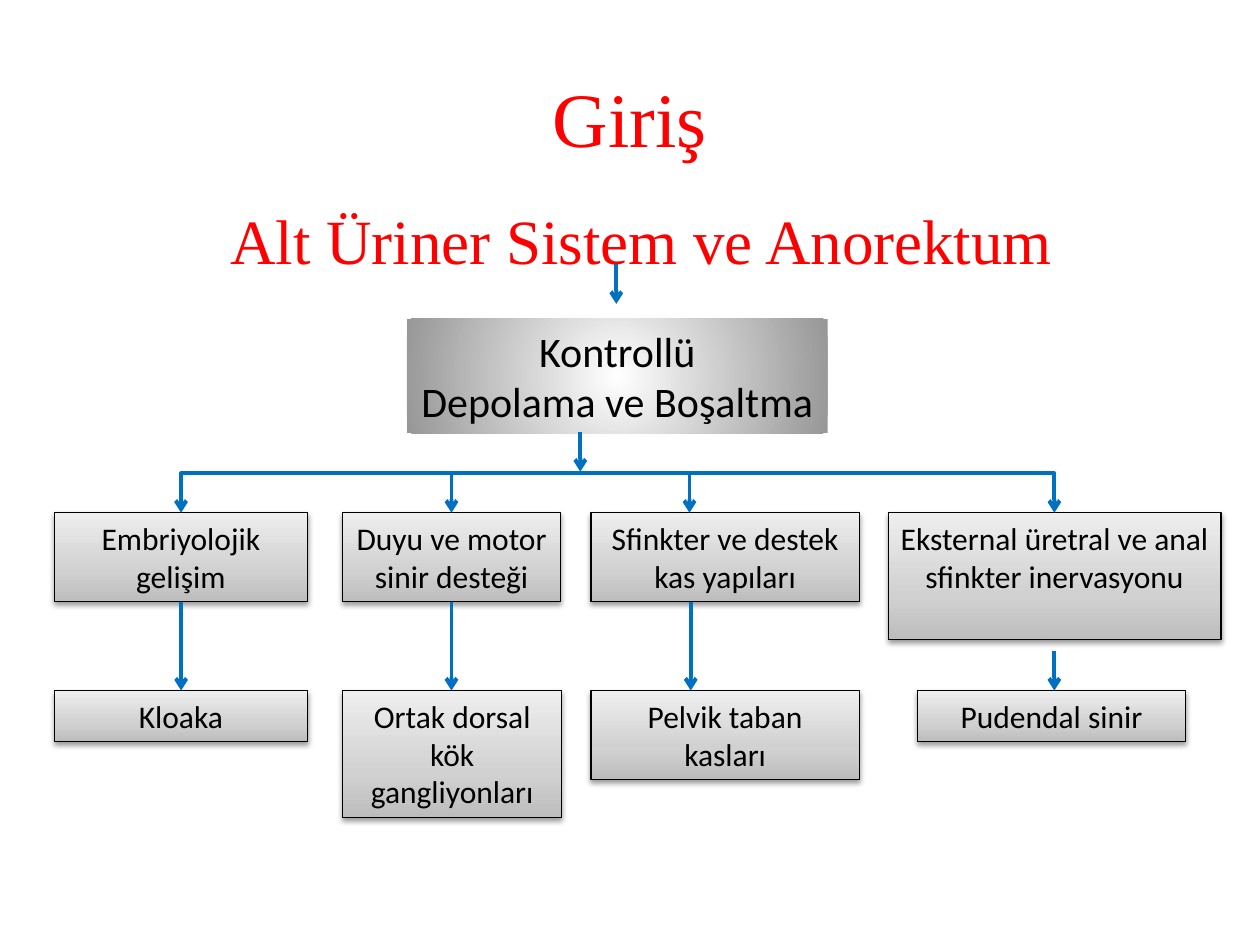
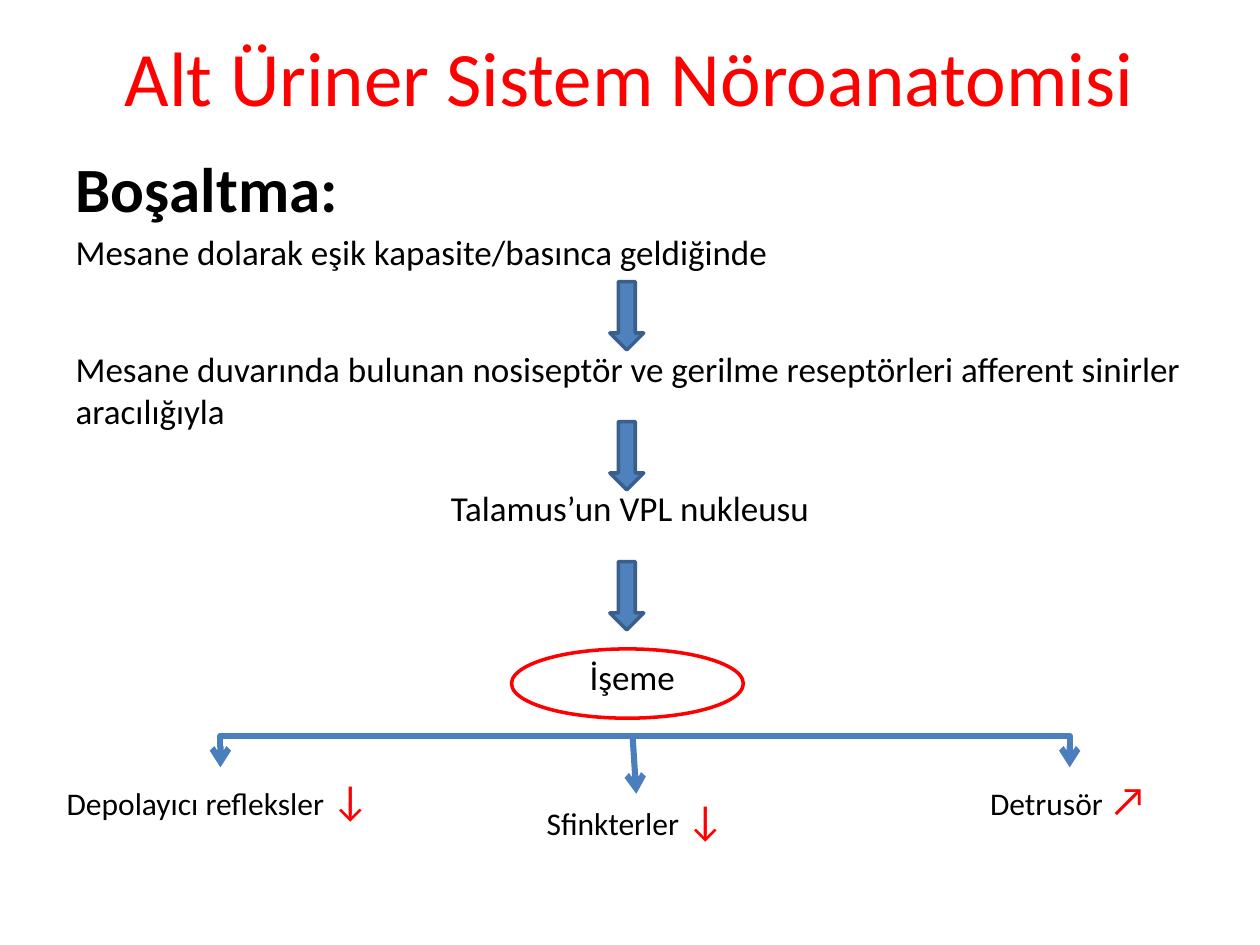
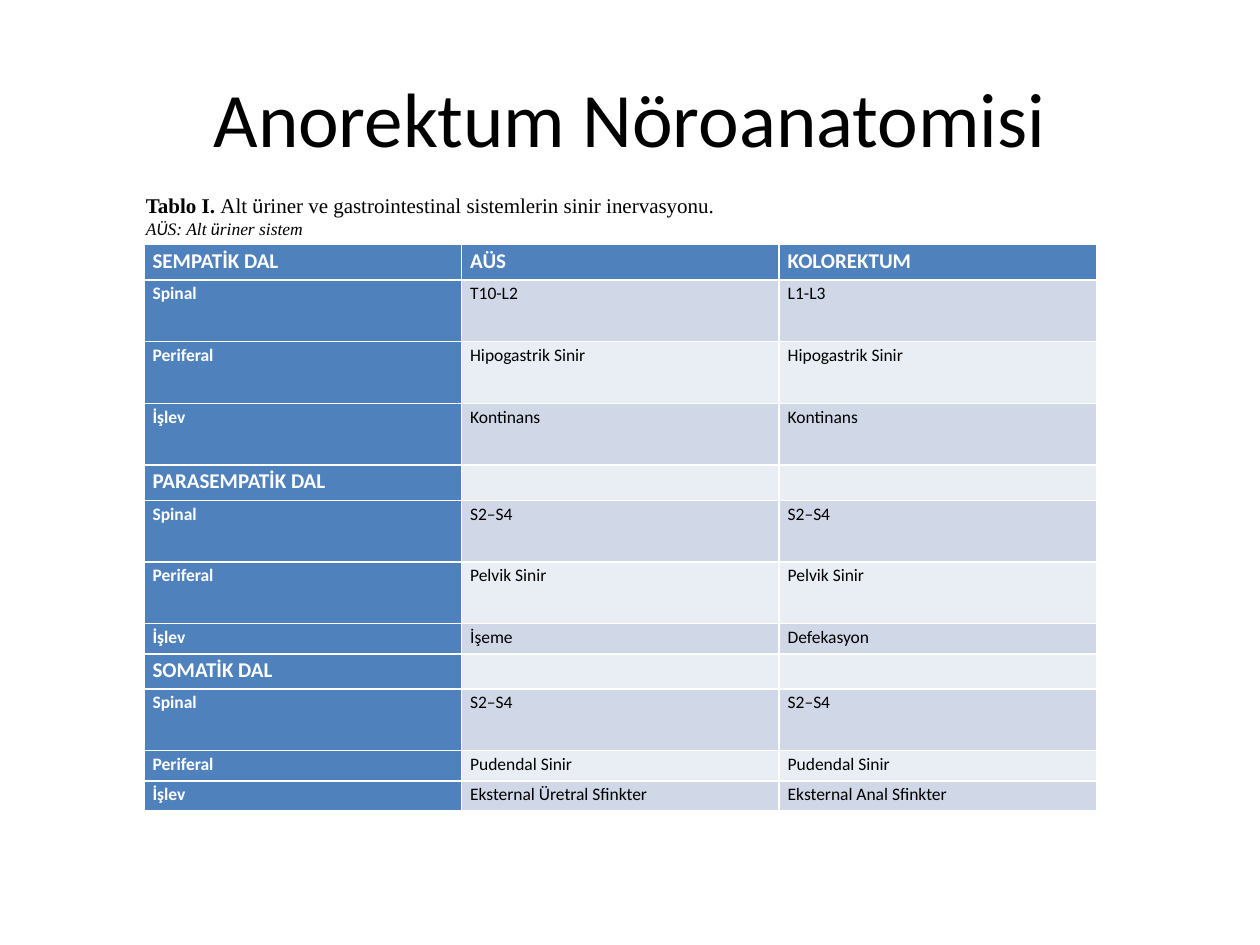
from dataclasses import dataclass

from lxml import etree
from pptx import Presentation
from pptx.dml.color import RGBColor
from pptx.enum.shapes import MSO_CONNECTOR, MSO_SHAPE
from pptx.enum.text import MSO_ANCHOR, MSO_AUTO_SIZE, PP_ALIGN
from pptx.oxml import parse_xml
from pptx.oxml.ns import nsdecls, qn
from pptx.util import Pt

CENTER, LEFT = PP_ALIGN.CENTER, PP_ALIGN.LEFT
TOP, MIDDLE = MSO_ANCHOR.TOP, MSO_ANCHOR.MIDDLE
NO_FIT, FIT_SHAPE = MSO_AUTO_SIZE.NONE, MSO_AUTO_SIZE.SHAPE_TO_FIT_TEXT
RECT, OVAL, DOWN_ARROW = MSO_SHAPE.RECTANGLE, MSO_SHAPE.OVAL, MSO_SHAPE.DOWN_ARROW
STRAIGHT, ELBOW = MSO_CONNECTOR.STRAIGHT, MSO_CONNECTOR.ELBOW
TITLE_AND_BODY, TITLE_ONLY = 1, 5

RED = RGBColor(0xFF, 0x00, 0x00)
BLACK = RGBColor(0x00, 0x00, 0x00)
WHITE = RGBColor(0xFF, 0xFF, 0xFF)
FLOW_BLUE = RGBColor(0x00, 0x70, 0xC0)
ACCENT = RGBColor(0x4F, 0x81, 0xBD)
ACCENT_EDGE = RGBColor(0x3A, 0x5F, 0x8C)
ACCENT_LINE = RGBColor(0x4B, 0x7E, 0xBC)
BAND_DARK = RGBColor(0xD0, 0xD8, 0xE8)
BAND_LIGHT = RGBColor(0xE9, 0xED, 0xF4)
GREY_LOW = RGBColor(0xBD, 0xBD, 0xBD)
GREY_MID = RGBColor(0xD1, 0xD1, 0xD1)
GREY_HIGH = RGBColor(0xEE, 0xEE, 0xEE)
GREY_EDGE = RGBColor(0x97, 0x97, 0x97)

SANS, SERIF = "Calibri", "Times New Roman"

UPWARD = '<a:lin ang="16200000" scaled="0"/>'
FROM_CENTER = ('<a:path path="circle"><a:fillToRect l="50000" t="50000" '
               'r="50000" b="50000"/></a:path>')
SOFT_SHADOW = (f'<a:outerShdw {nsdecls("a")} blurRad="40000" dist="20000" dir="5400000" '
               'rotWithShape="0"><a:srgbClr val="000000"><a:alpha val="38000"/>'
               '</a:srgbClr></a:outerShdw>')


@dataclass(frozen=True)
class Box:
    left: float
    top: float
    width: float
    lines: int
    text: str


@dataclass(frozen=True)
class Arrow:
    x: float
    y: float
    end_x: float
    end_y: float


@dataclass(frozen=True)
class Outcome:
    left: float
    top: float
    width: float
    text: str
    trend: str


CAUSE_TOP, DETAIL_TOP, FLOW_BAR = 293, 394.6, 270.5
FLOW_BOXES = [
    Box(31, CAUSE_TOP, 144.7, 2, "Embriyolojik gelişim"),
    Box(195.8, CAUSE_TOP, 124.6, 2, "Duyu ve motor sinir desteği"),
    Box(337.7, CAUSE_TOP, 153.4, 2, "Sfinkter ve destek kas yapıları"),
    Box(507.6, CAUSE_TOP, 190.1, 3, "Eksternal üretral ve anal sfinkter inervasyonu"),
    Box(31, DETAIL_TOP, 144.7, 1, "Kloaka"),
    Box(195.8, DETAIL_TOP, 125.3, 3, "Ortak dorsal kök gangliyonları"),
    Box(337.7, DETAIL_TOP, 153.4, 2, "Pelvik taban kasları"),
    Box(524.2, DETAIL_TOP, 153.4, 1, "Pudendal sinir"),
]
FLOW_ARROWS = [
    Arrow(352.2, 151, 352.2, 173.7),
    Arrow(331.6, 247, 331.6, 269.5),
    Arrow(368, FLOW_BAR, 103.5, CAUSE_TOP),
    Arrow(368, FLOW_BAR, 602.5, CAUSE_TOP),
    Arrow(258, FLOW_BAR, 258, CAUSE_TOP),
    Arrow(394, FLOW_BAR, 394, CAUSE_TOP),
    Arrow(103.5, 343.8, 103.5, DETAIL_TOP),
    Arrow(258, 343.8, 258, DETAIL_TOP),
    Arrow(394.7, 343.8, 394.7, DETAIL_TOP),
    Arrow(602.5, 372.2, 602.5, DETAIL_TOP),
]

OUTCOMES = [
    Outcome(31, 438.5, 189.4, "Depolayıcı refleksler ", "↓"),
    Outcome(305.3, 450, 117.4, "Sfinkterler ", "↓"),
    Outcome(558.7, 438.5, 105.1, "Detrusör ", "↗"),
]
OUTCOME_ARROWS = [
    Arrow(361.5, 420.5, 126, 438.5),
    Arrow(361.5, 420.5, 611.3, 438.5),
    Arrow(361.5, 420.5, 363.6, 453.6),
]

TALL, SECTION, SHORT = 35.25, 20.2, 17.25
NERVE_ROWS = [
    (SECTION, "SEMPATİK DAL", "AÜS", "KOLOREKTUM"),
    (TALL, "Spinal", "T10-L2", "L1-L3"),
    (TALL, "Periferal", "Hipogastrik Sinir", "Hipogastrik Sinir"),
    (TALL, "İşlev", "Kontinans", "Kontinans"),
    (SECTION, "PARASEMPATİK DAL", "", ""),
    (TALL, "Spinal", "S2–S4", "S2–S4"),
    (TALL, "Periferal", "Pelvik Sinir", "Pelvik Sinir"),
    (SHORT, "İşlev", "İşeme", "Defekasyon"),
    (SECTION, "SOMATİK DAL", "", ""),
    (TALL, "Spinal", "S2–S4", "S2–S4"),
    (SHORT, "Periferal", "Pudendal Sinir", "Pudendal Sinir"),
    (SHORT, "İşlev", "Eksternal Üretral Sfinkter", "Eksternal Anal Sfinkter"),
]


def add_run(p, text: str, *, size: float, color: RGBColor = BLACK, font: str = SANS,
            bold: bool = False, italic: bool = False) -> None:
    r = p.add_run()
    r.text = text
    r.font.size = Pt(size)
    r.font.color.rgb = color
    r.font.name = font
    r.font.bold = bold
    r.font.italic = italic


def next_paragraph(tf, *, align=LEFT, before: float = 0):
    """Return the empty first paragraph, or a new one after the last."""
    p = tf.paragraphs[0] if not tf.paragraphs[0].runs else tf.add_paragraph()
    p.alignment = align
    p.space_before = Pt(before)
    return p


def plain_paragraph(tf, *, align=LEFT, before: float = 0):
    """A list paragraph without bullet or indent."""
    p = next_paragraph(tf, align=align, before=before)
    pPr = p._p.get_or_add_pPr()
    pPr.set("marL", "0")
    pPr.set("indent", "0")
    etree.SubElement(pPr, qn("a:buNone"))
    return p


def place(sp, left: float, top: float, width: float, height: float) -> None:
    sp.left, sp.top, sp.width, sp.height = Pt(left), Pt(top), Pt(width), Pt(height)


def add_slide(prs, layout: int, title: str, *, top: float = 21.6,
              color: RGBColor = BLACK, font: str = SANS):
    s = prs.slides.add_slide(prs.slide_layouts[layout])
    place(s.shapes.title, 36, top, 648, 90)
    tf = s.shapes.title.text_frame
    tf.vertical_anchor = MIDDLE
    add_run(next_paragraph(tf, align=CENTER), title, size=44, color=color, font=font)
    return s


def body_frame(s, left: float, top: float, height: float):
    body = s.placeholders[1]
    place(body, left, top, 648, height)
    body.text_frame.auto_size = NO_FIT
    return body.text_frame


def add_shape(s, kind, left: float, top: float, width: float, height: float, *,
              fill: RGBColor | None = None, line: RGBColor | None = None,
              weight: float = 2):
    sp = s.shapes.add_shape(kind, Pt(left), Pt(top), Pt(width), Pt(height))
    sp.shadow.inherit = False
    if fill is None:
        sp.fill.background()
    else:
        sp.fill.solid()
        sp.fill.fore_color.rgb = fill
    if line is None:
        sp.line.fill.background()
    else:
        sp.line.color.rgb = line
        sp.line.width = Pt(weight)
    return sp


def set_gradient(sp, stops: list[tuple[int, RGBColor]], direction: str) -> None:
    marks = "".join(f'<a:gs pos="{pos * 1000}"><a:srgbClr val="{color}"/></a:gs>'
                    for pos, color in stops)
    spPr = sp._element.spPr
    spPr.replace(spPr.find(qn("a:noFill")), parse_xml(
        f'<a:gradFill {nsdecls("a")} rotWithShape="1"><a:gsLst>{marks}</a:gsLst>'
        f'{direction}</a:gradFill>'))


def add_text_box(s, left: float, top: float, width: float, height: float, *,
                 wrap: bool = False):
    tf = s.shapes.add_textbox(Pt(left), Pt(top), Pt(width), Pt(height)).text_frame
    tf.word_wrap = wrap
    tf.auto_size = FIT_SHAPE
    return tf


def add_flow_box(s, box: Box) -> None:
    sp = add_shape(s, RECT, box.left, box.top, box.width, 7.2 + 21.8 * box.lines,
                   line=BLACK, weight=0.75)
    set_gradient(sp, [(0, GREY_LOW), (35, GREY_MID), (100, GREY_HIGH)], UPWARD)
    sp._element.spPr.find(qn("a:effectLst")).append(parse_xml(SOFT_SHADOW))
    tf = sp.text_frame
    tf.word_wrap = True
    tf.vertical_anchor = TOP
    add_run(next_paragraph(tf, align=CENTER), box.text, size=18)


def add_arrow(s, arrow: Arrow, *, color: RGBColor, weight: float) -> None:
    """Draw a straight arrow, or one that runs sideways and then down."""
    bent = abs(arrow.end_x - arrow.x) > 10
    c = s.shapes.add_connector(ELBOW if bent else STRAIGHT, Pt(arrow.x), Pt(arrow.y),
                               Pt(arrow.end_x), Pt(arrow.end_y))
    c.line.color.rgb = color
    c.line.width = Pt(weight)
    spPr = c._element.spPr
    if bent:
        spPr.find(qn("a:prstGeom")).set("prst", "bentConnector2")
    etree.SubElement(spPr.find(qn("a:ln")), qn("a:tailEnd")).set("type", "arrow")
    etree.SubElement(spPr, qn("a:effectLst"))


def build_intro(prs) -> None:
    s = add_slide(prs, TITLE_AND_BODY, "Giriş", color=RED, font=SERIF)
    tf = body_frame(s, 42.5, 111.6, 373.7)
    add_run(plain_paragraph(tf, align=CENTER), "Alt Üriner Sistem ve Anorektum",
            size=36, color=RED, font=SERIF)

    control = add_shape(s, RECT, 232.5, 182, 240.5, 65.5)
    set_gradient(control, [(0, WHITE), (100, GREY_EDGE)], FROM_CENTER)
    control.text_frame.word_wrap = False
    for text in ("Kontrollü", "Depolama ve Boşaltma"):
        add_run(next_paragraph(control.text_frame, align=CENTER), text, size=24)

    for box in FLOW_BOXES:
        add_flow_box(s, box)
    for arrow in FLOW_ARROWS:
        add_arrow(s, arrow, color=FLOW_BLUE, weight=2.25)


def build_voiding(prs) -> None:
    s = add_slide(prs, TITLE_AND_BODY, "Alt Üriner Sistem Nöroanatomisi", top=-2, color=RED)
    tf = body_frame(s, 36, 82, 396.7)
    add_run(plain_paragraph(tf), "Boşaltma:", size=36, bold=True)
    for text, before, align in (
        ("Mesane dolarak eşik kapasite/basınca geldiğinde", 3, LEFT),
        ("Mesane duvarında bulunan nosiseptör ve gerilme reseptörleri "
         "afferent sinirler aracılığıyla", 42.5, LEFT),
        ("Talamus’un VPL nukleusu", 31.5, CENTER),
    ):
        add_run(plain_paragraph(tf, align=align, before=before), text, size=20)

    for step in range(3):
        add_shape(s, DOWN_ARROW, 348.5, 161 + 80 * step, 19.4, 39,
                  fill=ACCENT, line=ACCENT_EDGE)
    add_run(next_paragraph(add_text_box(s, 329.8, 370.8, 64, 31.5)), "İşeme", size=20)
    for outcome in OUTCOMES:
        p = next_paragraph(add_text_box(s, outcome.left, outcome.top, outcome.width, 36))
        add_run(p, outcome.text, size=18)
        add_run(p, outcome.trend, size=24, color=RED)
    for arrow in OUTCOME_ARROWS:
        add_arrow(s, arrow, color=ACCENT_LINE, weight=3.5)
    add_shape(s, OVAL, 292.3, 370.8, 132.5, 39.6, line=RED)


def fill_cell(cell, text: str, row: int, col: int, size: float) -> None:
    heading = row == 0 or col == 0
    cell.fill.solid()
    cell.fill.fore_color.rgb = ACCENT if heading else BAND_DARK if row % 2 else BAND_LIGHT
    cell.margin_left = cell.margin_right = Pt(5)
    cell.margin_top = cell.margin_bottom = 0
    p = next_paragraph(cell.text_frame)
    p.line_spacing = 1.15
    if text:
        add_run(p, text, size=size, color=WHITE if heading else BLACK, bold=heading)
    else:
        p._p.get_or_add_endParaRPr().set("sz", str(size * 100))


def build_nerve_table(prs) -> None:
    s = add_slide(prs, TITLE_ONLY, "Anorektum Nöroanatomisi")
    height = sum(row[0] for row in NERVE_ROWS)
    table = s.shapes.add_table(len(NERVE_ROWS), 3, Pt(82.2), Pt(139.8),
                               Pt(544.5), Pt(height)).table
    table.first_col = True
    for column in table.columns:
        column.width = Pt(181.5)
    for i, (row_height, *texts) in enumerate(NERVE_ROWS):
        table.rows[i].height = Pt(row_height)
        for j, text in enumerate(texts):
            fill_cell(table.cell(i, j), text, i, j, 12 if row_height == SECTION else 10)

    tf = add_text_box(s, 76.3, 106.5, 360, 33.8, wrap=True)
    tf.vertical_anchor = MIDDLE
    p = next_paragraph(tf)
    add_run(p, "Tablo I. ", size=12, font=SERIF, bold=True)
    for text, font in (("Alt ", SERIF), ("ü", SANS),
                       ("riner ve gastrointestinal sistemlerin sinir inervasyonu.", SERIF)):
        add_run(p, text, size=12, font=font)
    p = next_paragraph(tf)
    for text, font in (("A", SERIF), ("Ü", SANS), ("S: Alt ", SERIF), ("ü", SANS),
                       ("riner sistem", SERIF)):
        add_run(p, text, size=10, font=font, italic=True)


def main() -> None:
    prs = Presentation()
    prs.slide_width, prs.slide_height = Pt(720), Pt(540)
    build_intro(prs)
    build_voiding(prs)
    build_nerve_table(prs)
    prs.save("out.pptx")


if __name__ == "__main__":
    main()
